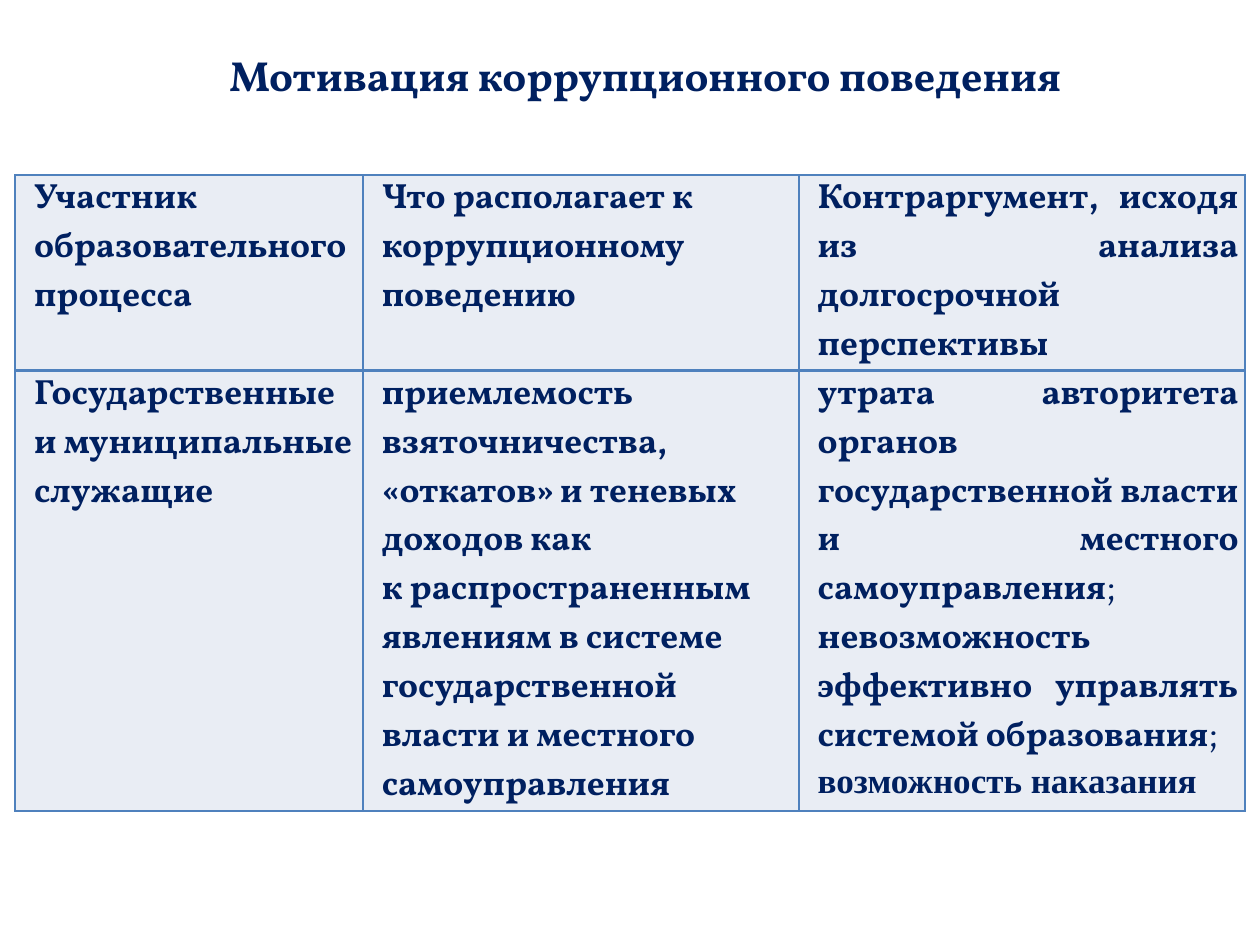
"""Build a slide with a table on the motives of corrupt behaviour."""

from dataclasses import dataclass

from lxml.etree import SubElement
from pptx import Presentation
from pptx.dml.color import RGBColor
from pptx.enum.text import MSO_ANCHOR, MSO_AUTO_SIZE, PP_ALIGN
from pptx.oxml.ns import qn
from pptx.table import _Cell
from pptx.text.text import Font
from pptx.util import Inches, Pt

COLORS = {"text": "002060", "fill": "E9EDF4", "border": "4F81BD"}
MAIN_FONT = "Vollkorn"
COLUMN_WIDTHS = (2.76, 3.46, 3.54)
ROW_HEIGHTS = (1.08, 2.78)


@dataclass(frozen=True)
class Span:
    text: str
    bold: bool = True


@dataclass(frozen=True)
class Line:
    spans: tuple[Span, ...]
    font: str = MAIN_FONT


@dataclass(frozen=True)
class Entry:
    lines: tuple[Line, ...]
    justified: bool = False


def plain(*texts: str, justified: bool = False) -> Entry:
    """Make an entry whose paragraphs are each one bold span."""
    return Entry(tuple(Line((Span(text),)) for text in texts), justified)


ROWS = (
    (
        plain("Участник образовательного процесса", justified=True),
        plain("Что располагает к коррупционному поведению"),
        plain("Контраргумент, исходя из анализа долгосрочной перспективы", justified=True),
    ),
    (
        plain("Государственные и муниципальные служащие"),
        plain(
            "приемлемость взяточничества, «откатов» и теневых доходов как",
            "к распространенным явлениям в системе государственной власти "
            "и местного самоуправления",
        ),
        Entry(
            (
                Line((
                    Span("утрата авторитета органов государственной власти "
                         "и местного самоуправления"),
                    Span(";", bold=False),
                    Span(" невозможность эффективно управлять системой образования"),
                    Span(";", bold=False),
                )),
                Line((Span("возможность наказания"),), "Times New Roman"),
            ),
            justified=True,
        ),
    ),
)


def style_font(font: Font, name: str, size: int) -> None:
    """Give a font its typeface, size and the text colour."""
    font.name = name
    font.size = Pt(size)
    font.color.rgb = RGBColor.from_string(COLORS["text"])


def add_borders(cell: _Cell, top: int, bottom: int) -> None:
    """Draw the four edges of a cell, with widths in points."""
    properties = cell._tc.get_or_add_tcPr()
    for side, width in (("L", 1), ("R", 1), ("T", top), ("B", bottom)):
        edge = SubElement(properties, qn(f"a:ln{side}"), w=str(Pt(width)))
        fill = SubElement(edge, qn("a:solidFill"))
        SubElement(fill, qn("a:srgbClr"), val=COLORS["border"])


def fill_cell(cell: _Cell, entry: Entry) -> None:
    """Write an entry into a cell and colour its background."""
    cell.margin_left = cell.margin_right = Inches(0.05)
    cell.margin_top = cell.margin_bottom = 0
    cell.fill.solid()
    cell.fill.fore_color.rgb = RGBColor.from_string(COLORS["fill"])
    frame = cell.text_frame
    for index, line in enumerate(entry.lines):
        paragraph = frame.add_paragraph() if index else frame.paragraphs[0]
        paragraph.alignment = PP_ALIGN.JUSTIFY if entry.justified else PP_ALIGN.LEFT
        properties = paragraph._p.get_or_add_pPr()
        properties.set("marL", str(Inches(0.1)))
        properties.set("indent", "0")
        for span in line.spans:
            run = paragraph.add_run()
            run.text = span.text
            run.font.bold = span.bold
            style_font(run.font, line.font, 20)


def main() -> None:
    """Create the deck and save it."""
    deck = Presentation()
    deck.slide_width, deck.slide_height = Inches(10), Inches(7.5)
    page = deck.slides.add_slide(deck.slide_layouts[5])

    title = page.shapes.title
    title.left, title.top = Inches(1.38), Inches(0.34)
    title.width, title.height = Inches(7.48), Inches(0.81)
    frame = title.text_frame
    frame.text = "Мотивация коррупционного поведения"
    frame.word_wrap = True
    frame.auto_size = MSO_AUTO_SIZE.NONE
    frame.vertical_anchor = MSO_ANCHOR.TOP
    heading = frame.paragraphs[0]
    heading.alignment = PP_ALIGN.CENTER
    heading.font.bold = True
    style_font(heading.font, MAIN_FONT, 24)

    table = page.shapes.add_table(
        len(ROWS), len(COLUMN_WIDTHS), Inches(0.12), Inches(1.39),
        Inches(sum(COLUMN_WIDTHS)), Inches(sum(ROW_HEIGHTS)),
    ).table
    for column, width in zip(table.columns, COLUMN_WIDTHS):
        column.width = Inches(width)
    for row_index, (row, height) in enumerate(zip(table.rows, ROW_HEIGHTS)):
        row.height = Inches(height)
        top, bottom = (2, 1) if row_index else (1, 2)
        for cell, entry in zip(row.cells, ROWS[row_index]):
            add_borders(cell, top, bottom)
            fill_cell(cell, entry)

    deck.save("out.pptx")


if __name__ == "__main__":
    main()
